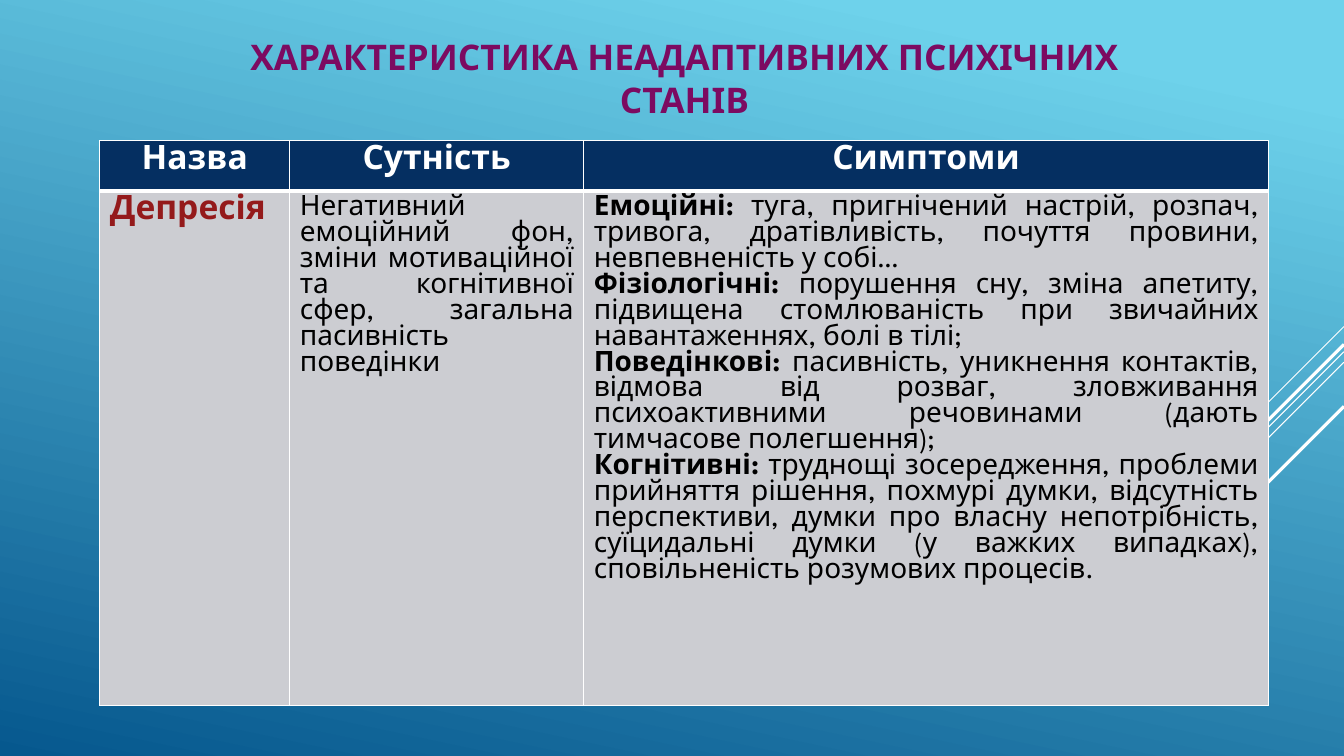
from dataclasses import dataclass

import pptx
import pptx.dml.color
import pptx.enum.shapes
import pptx.enum.text
import pptx.oxml
import pptx.oxml.ns
import pptx.util

EMU_PER_PX = 9525
FONT = "League Spartan"
COLORS = {
    "sky": "6ED2EB",
    "deep": "06588E",
    "white": "FFFFFF",
    "black": "000000",
    "title": "7C0B61",
    "header": "052F61",
    "body": "CCCDD2",
    "name": "941A1B",
}
ALIGN = pptx.enum.text.PP_ALIGN


@dataclass(frozen=True)
class Ray:
    """A diagonal running down and left from the right edge."""
    top: int
    reach: int
    weight: float


@dataclass(frozen=True)
class Style:
    size: float
    color: str
    bold: bool
    align: ALIGN


@dataclass(frozen=True)
class CellText:
    style: Style
    paragraphs: tuple[tuple[str, str], ...]  # bold lead, then the rest


PAGE_WIDTH, PAGE_HEIGHT = 1280, 720
RAYS = [Ray(311, 96, 0.75), Ray(335, 313, 0.75), Ray(345, 199, 0.75),
        Ray(328, 183, 2.25), Ray(387, 134, 2.25)]
COLUMN_WIDTHS = [181, 280, 652]
ROW_HEIGHTS = [39, 379]
ROW_FILLS = ["header", "body"]
BORDERS = [{"L": 1, "R": 1, "T": 1, "B": 3}, {"L": 1, "R": 1, "T": 3, "B": 1}]

TITLE = Style(25.2, "title", True, ALIGN.CENTER)
HEADER = Style(24, "white", True, ALIGN.CENTER)
NAME = Style(24, "name", True, ALIGN.JUSTIFY)
BODY = Style(20, "black", False, ALIGN.JUSTIFY)

ROWS = [
    [CellText(HEADER, (("", word),)) for word in ("Назва", "Сутність", "Симптоми")],
    [
        CellText(NAME, (("", "Депресія"),)),
        CellText(BODY, (("", "Негативний емоційний фон, зміни мотиваційної та "
                             "когнітивної сфер, загальна пасивність поведінки"),)),
        CellText(BODY, (
            ("Емоційні: ", "туга, пригнічений настрій, розпач, тривога, "
             "дратівливість, почуття провини, невпевненість у собі…"),
            ("Фізіологічні: ", "порушення сну, зміна апетиту, підвищена "
             "стомлюваність при звичайних навантаженнях, болі в тілі;"),
            ("Поведінкові: ", "пасивність, уникнення контактів, відмова від розваг, "
             "зловживання психоактивними речовинами (дають тимчасове полегшення);"),
            ("Когнітивні: ", "труднощі зосередження, проблеми прийняття рішення, "
             "похмурі думки, відсутність перспективи, думки про власну непотрібність, "
             "суїцидальні думки (у важких випадках), сповільненість розумових процесів."),
        )),
    ],
]


def px(length: int) -> pptx.util.Emu:
    return pptx.util.Emu(length * EMU_PER_PX)


def rgb(name: str) -> pptx.dml.color.RGBColor:
    return pptx.dml.color.RGBColor.from_string(COLORS[name])


def write_text(frame, text: CellText) -> None:
    style = text.style
    for index, (lead, rest) in enumerate(text.paragraphs):
        para = frame.add_paragraph() if index else frame.paragraphs[0]
        para.alignment = style.align
        for words, bold in ((lead, True), (rest, style.bold)):
            if not words:
                continue
            span = para.add_run()
            span.text = words
            formats = {"name": FONT, "size": pptx.util.Pt(style.size), "bold": bold}
            for attribute, value in formats.items():
                setattr(span.font, attribute, value)
            span.font.color.rgb = rgb(style.color)


def paint_background(page) -> None:
    fill = page.background.fill
    fill.gradient()
    fill.gradient_angle = 258
    for stop, color, position in zip(fill.gradient_stops, ("sky", "deep"), (0.1, 1)):
        stop.color.rgb = rgb(color)
        stop.position = position


def draw_ray(page, ray: Ray) -> None:
    line = page.shapes.add_connector(
        pptx.enum.shapes.MSO_CONNECTOR.STRAIGHT, px(PAGE_WIDTH), px(ray.top),
        px(PAGE_WIDTH - ray.reach), px(ray.top + ray.reach))
    line.line.color.rgb = rgb("white")
    line.line.width = pptx.util.Pt(ray.weight)
    properties = line._element.spPr
    properties.append(pptx.oxml.parse_xml(
        f'<a:effectLst {pptx.oxml.ns.nsdecls("a")}/>'))


def draw_title(page) -> None:
    box = page.shapes.add_textbox(px(174), px(32), px(956), px(84))
    formats = {"word_wrap": True, "vertical_anchor": pptx.enum.text.MSO_ANCHOR.MIDDLE}
    for attribute, value in formats.items():
        setattr(box.text_frame, attribute, value)
    write_text(box.text_frame, CellText(
        TITLE, (("", "ХАРАКТЕРИСТИКА НЕАДАПТИВНИХ ПСИХІЧНИХ СТАНІВ"),)))


def add_borders(cell, weights: dict[str, int]) -> None:
    properties = cell._tc.get_or_add_tcPr()
    for side, weight in weights.items():
        properties.append(pptx.oxml.parse_xml(
            f'<a:ln{side} {pptx.oxml.ns.nsdecls("a")} w="{pptx.util.Pt(weight)}">'
            f'<a:solidFill><a:srgbClr val="{COLORS["white"]}"/></a:solidFill>'
            f'</a:ln{side}>'))


def draw_table(page) -> None:
    table = page.shapes.add_table(
        len(ROWS), len(COLUMN_WIDTHS), px(95), px(134),
        px(sum(COLUMN_WIDTHS)), px(sum(ROW_HEIGHTS))).table
    table.horz_banding = False
    for column, width in zip(table.columns, COLUMN_WIDTHS):
        column.width = px(width)
    for row, height, texts, color, weights in zip(
            table.rows, ROW_HEIGHTS, ROWS, ROW_FILLS, BORDERS):
        row.height = px(height)
        for cell, text in zip(row.cells, texts):
            add_borders(cell, weights)
            cell.fill.solid()
            cell.fill.fore_color.rgb = rgb(color)
            write_text(cell.text_frame, text)


def main() -> None:
    deck = pptx.Presentation()
    deck.slide_width, deck.slide_height = px(PAGE_WIDTH), px(PAGE_HEIGHT)
    page = deck.slides.add_slide(deck.slide_layouts[6])
    # Backdrop
    paint_background(page)
    for ray in RAYS:
        draw_ray(page, ray)
    # Content
    draw_title(page)
    draw_table(page)
    deck.save("out.pptx")


if __name__ == "__main__":
    main()
